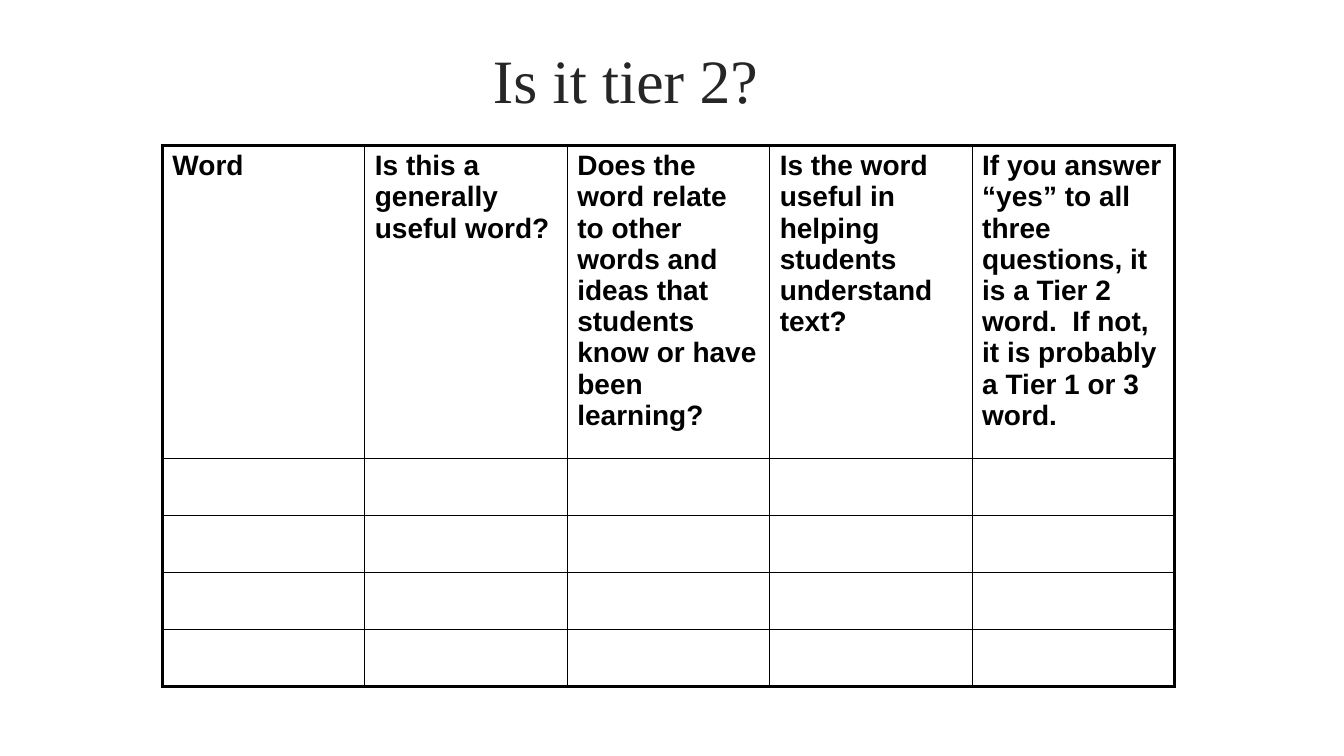
from dataclasses import dataclass
from pptx import Presentation
from pptx.dml.color import RGBColor as Rgb
from pptx.enum.text import MSO_ANCHOR as Anchor
from pptx.oxml.xmlchemy import OxmlElement as Node
from pptx.util import Inches, Pt

WIDE, HIGH = Inches(13.33), Inches(7.5)


@dataclass(frozen=True)
class Theme:
    ink: str = "000000"
    gray: str = "262626"
    serif: str = "Times New Roman"
    sans: str = "Arial"
    big: float = 44
    body: float = 20
    thin: float = 1
    thick: float = 2.25


THEME = Theme()
HEADS = (
    "Word",
    "Is this a generally useful word?",
    "Does the word relate to other words and ideas that students know or have been learning?",
    "Is the word useful in helping students understand text?",
    "If you answer “yes” to all three questions, it is a Tier 2 word.  If not, it is probably a Tier 1 or 3 word.",
)
BLANKS = 4


def across(part):
    return round(WIDE * part / 100)


def down(part):
    return round(HIGH * part / 100)


def place(left, top, width, height):
    return across(left), down(top), across(width), down(height)


def write(frame, text, color, **style):
    para = frame.paragraphs[0]
    run = para.add_run()
    run.text = text
    for key, value in style.items():
        setattr(run.font, key, value)
    run.font.color.rgb = Rgb.from_string(color)


def title(slide, text, box):
    frame = slide.shapes.add_textbox(*box).text_frame
    frame.word_wrap = True
    frame.vertical_anchor = Anchor.MIDDLE
    write(frame, text, THEME.gray, name=THEME.serif, size=Pt(THEME.big))


def edge(cell, side, width):
    line = Node(f"a:ln{side}")
    line.set("w", str(Pt(width)))
    fill = Node("a:solidFill")
    color = Node("a:srgbClr")
    color.set("val", THEME.ink)
    fill.append(color)
    line.append(fill)
    cell._tc.get_or_add_tcPr().append(line)


def frame_cell(cell, row, col, rows, cols):
    outer = {"L": col == 0, "R": col == cols - 1, "T": row == 0, "B": row == rows - 1}
    for side, rim in outer.items():
        edge(cell, side, THEME.thick if rim else THEME.thin)
    cell.fill.background()


def grid(slide, heads, blanks, box, head, step):
    rows, cols = blanks + 1, len(heads)
    table = slide.shapes.add_table(rows, cols, *box).table
    for key, value in {"first_row": False, "horz_banding": False}.items():
        setattr(table, key, value)
    for row in range(rows):
        table.rows[row].height = down(step if row else head)
        for col in range(cols):
            frame_cell(table.cell(row, col), row, col, rows, cols)
    for col, text in enumerate(heads):
        write(table.cell(0, col).text_frame, text, THEME.ink,
              name=THEME.sans, size=Pt(THEME.body), bold=True)


def main():
    deck = Presentation()
    deck.slide_width, deck.slide_height = WIDE, HIGH
    slide = deck.slides.add_slide(deck.slide_layouts[6])
    title(slide, "Is it tier 2?", place(35.93, 4.8, 40.36, 11.2))
    head, step = 41.4, 7.55
    grid(slide, HEADS, BLANKS, place(12.08, 19.2, 75.32, head + BLANKS * step), head, step)
    deck.save("out.pptx")


if __name__ == "__main__":
    main()
